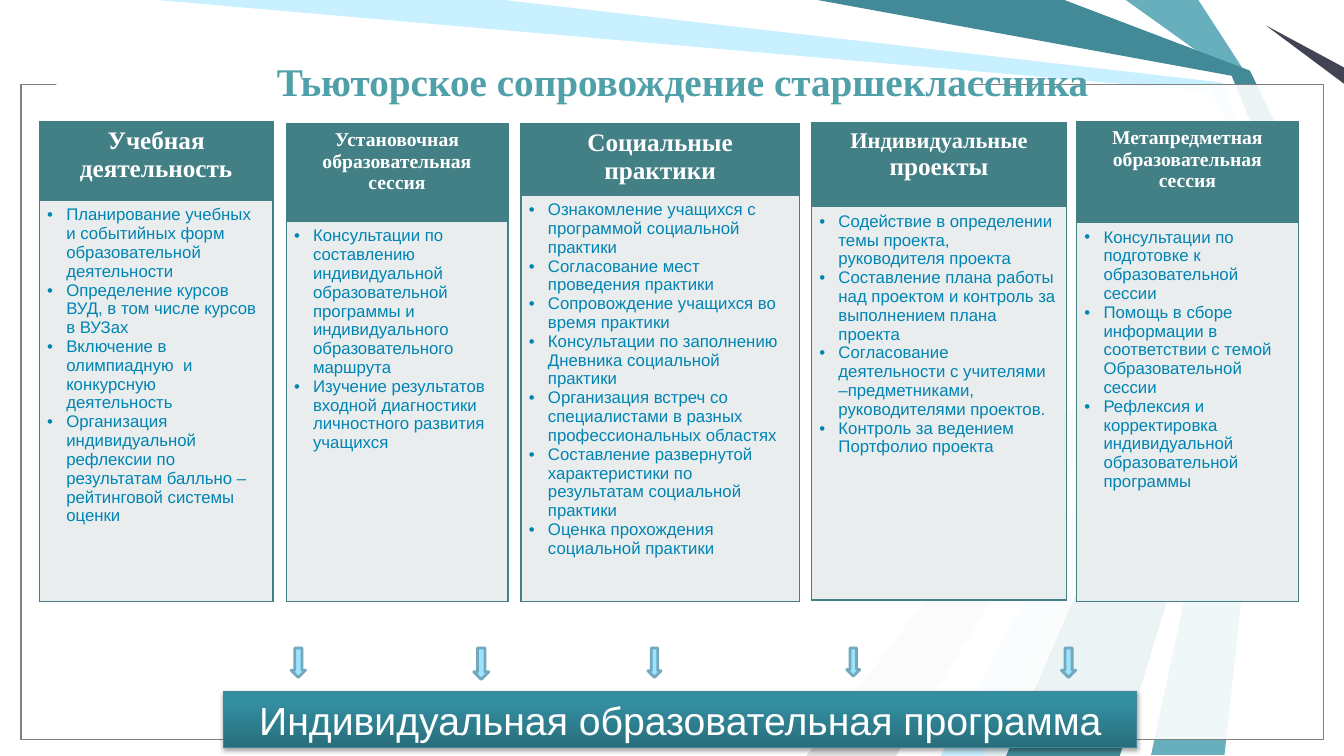
"""Build the slide on tutor support for senior pupils."""
from dataclasses import dataclass

import lxml.etree
import pptx
import pptx.dml.color
import pptx.enum.shapes
import pptx.enum.text
import pptx.oxml.ns
import pptx.util

Cm = pptx.util.Cm
Pt = pptx.util.Pt
qn = pptx.oxml.ns.qn
SHAPE = pptx.enum.shapes.MSO_SHAPE
CENTER = pptx.enum.text.PP_ALIGN.CENTER
SERIF, SANS = "Times New Roman", "Arial"
TEAL, PALE, BLUE, WHITE = "438086", "E9EDED", "0084B4", "FFFFFF"


@dataclass
class Ray:
    color: str
    points: list[tuple[float, float]]


@dataclass
class Span:
    text: str
    size: int


@dataclass
class Column:
    left: float
    top: float
    width: float
    head_height: float
    body_height: float
    heading: list[Span]
    tasks: list[str]


@dataclass
class Arrow:
    left: float
    width: float
    height: float


RAYS = [
    Ray("67AFBD", [(30.2, 0), (31.47, 1.96), (32.46, 4.24), (30.86, 19.02),
                   (29.01, 19.02), (32.18, 4.24), (31.04, 1.91), (28.37, 0)]),
    Ray("C9F0FF", [(3.96, 0), (12.98, 0), (30.94, 1.98), (31.9, 4.29),
                   (25.12, 19.05), (23.42, 19.05), (31.65, 4.39), (30.51, 2.31)]),
    Ray("E0E0E0", [(22.58, 19.05), (31.39, 4.6), (20.32, 19.05)]),
    Ray(WHITE, [(12.7, 0), (30.81, 2.08), (31.57, 4.11), (22.86, 19.05),
                (23.7, 19.05), (31.85, 4.01), (31.04, 1.91), (20.32, 0)]),
    Ray(WHITE, [(31.32, 0), (31.04, 0.43), (33.12, 3.05), (33.87, 3.18),
                (33.87, 2.54), (31.32, 0.43), (31.57, 0)]),
    Ray("424456", [(33.87, 2.11), (31.9, 0.64), (33.87, 1.7)]),
    Ray("428A98", [(20.6, 0), (26.82, 0), (31.5, 1.78), (32.72, 4.29),
                   (28.22, 19.05), (24.84, 19.05), (31.9, 4.01), (31.04, 1.91)]),
    Ray("E0EFF1", [(24.79, 19.05), (31.57, 4.65), (25.35, 19.05)]),
]

COLUMNS = [
    Column(0.99, 3.07, 5.89, 1.98, 10.11, [Span("Учебная деятельность", 18)], [
        "Планирование учебных и событийных форм образовательной деятельности",
        "Определение курсов ВУД, в том числе курсов в ВУЗах",
        "Включение в олимпиадную  и конкурсную деятельность",
        "Организация индивидуальной рефлексии по результатам балльно –рейтинговой системы оценки",
    ]),
    Column(7.21, 3.12, 5.59, 2.46, 9.58, [Span("Установочная образовательная сессия", 14)], [
        "Консультации по составлению индивидуальной образовательной программы "
        "и индивидуального образовательного маршрута",
        "Изучение результатов входной диагностики личностного развития учащихся",
    ]),
    Column(13.13, 3.12, 7.01, 1.8, 10.24, [Span("Социальные практики", 18)], [
        "Ознакомление учащихся с программой социальной практики",
        "Согласование мест проведения практики",
        "Сопровождение учащихся во время практики",
        "Консультации по заполнению Дневника социальной практики",
        "Организация встреч со специалистами в разных профессиональных областях",
        "Составление развернутой характеристики по результатам социальной практики",
        "Оценка прохождения социальной практики",
    ]),
    Column(20.45, 3.1, 6.43, 2.11, 9.91, [Span("Индивидуальные ", 16), Span("проекты", 18)], [
        "Содействие в определении темы проекта, руководителя проекта",
        "Составление плана работы над проектом и контроль за выполнением плана проекта",
        "Согласование деятельности с учителями –предметниками, руководителями проектов.",
        "Контроль за ведением Портфолио проекта",
    ]),
    Column(27.13, 3.07, 5.59, 2.54, 9.55, [Span("Метапредметная образовательная сессия", 14)], [
        "Консультации по подготовке к образовательной сессии",
        "Помощь в сборе информации в соответствии с темой Образовательной сессии",
        "Рефлексия и корректировка индивидуальной образовательной программы",
    ]),
]

ARROWS = [Arrow(7.34, 0.36, 0.74), Arrow(11.94, 0.38, 0.79), Arrow(16.33, 0.33, 0.74),
          Arrow(21.34, 0.33, 0.71), Arrow(26.75, 0.36, 0.74)]


def rgb(color: str) -> pptx.dml.color.RGBColor:
    return pptx.dml.color.RGBColor.from_string(color)


def add_node(parent, tag: str, **attributes: str):
    return lxml.etree.SubElement(parent, qn(tag), attributes)


def paint(shape, color: str, line: str = "", weight: float = 0.75) -> None:
    shape.shadow.inherit = False
    shape.fill.solid()
    shape.fill.fore_color.rgb = rgb(color)
    if line:
        shape.line.color.rgb = rgb(line)
        shape.line.width = Pt(weight)
    else:
        shape.line.fill.background()


def set_font(paragraph, name: str, size: int, color: str, bold: bool = False) -> None:
    font = paragraph.font
    font.name, font.size, font.bold = name, Pt(size), bold
    font.color.rgb = rgb(color)


def add_ray(page, ray: Ray) -> None:
    points = [(Cm(x), Cm(y)) for x, y in ray.points]
    builder = page.shapes.build_freeform(*points[0], scale=1.0)
    builder.add_line_segments(points[1:], close=True)
    paint(builder.convert_to_shape(), ray.color)


def add_box(page, kind, left: float, top: float, width: float, height: float):
    return page.shapes.add_shape(kind, Cm(left), Cm(top), Cm(width), Cm(height))


def add_frame(page) -> None:
    for line in (BLUE, "808080"):
        frame = add_box(page, SHAPE.RECTANGLE, 0.53, 2.13, 32.82, 16.51)
        paint(frame, WHITE, line)
        color = frame.fill._xPr.find(qn("a:solidFill")).find(qn("a:srgbClr"))
        add_node(color, "a:alpha", val="69000")
    paint(add_box(page, SHAPE.RECTANGLE, 1.42, 1.88, 23.14, 0.43), WHITE)


def style_cell(cell, color: str) -> None:
    cell.margin_left = cell.margin_right = Cm(0.2)
    cell.margin_top = cell.margin_bottom = Cm(0.13)
    for side in "LRTB":
        border = add_node(cell._tc.get_or_add_tcPr(), f"a:ln{side}", w=str(Pt(1)))
        add_node(add_node(border, "a:solidFill"), "a:srgbClr", val=TEAL)
    cell.fill.solid()
    cell.fill.fore_color.rgb = rgb(color)


def add_column(page, column: Column) -> None:
    heights = [column.head_height, column.body_height]
    table = page.shapes.add_table(2, 1, Cm(column.left), Cm(column.top),
                                  Cm(column.width), Cm(sum(heights))).table
    table.first_row = table.horz_banding = False
    for row, height in zip(table.rows, heights):
        row.height = Cm(height)
    head, body = table.cell(0, 0), table.cell(1, 0)
    style_cell(head, TEAL)
    style_cell(body, PALE)
    para = head.text_frame.paragraphs[0]
    para.alignment = CENTER
    set_font(para, SERIF, column.heading[0].size, WHITE, True)
    for span in column.heading:
        run = para.add_run()
        run.text = span.text
        if len(column.heading) > 1:
            run.font.size = Pt(span.size)
    body.text_frame.text = "\n".join(column.tasks)
    for para in body.text_frame.paragraphs:
        properties = para._p.get_or_add_pPr()
        properties.set("marL", str(Cm(0.48)))
        properties.set("indent", str(-Cm(0.48)))
        add_node(properties, "a:buFont", typeface=SANS)
        add_node(properties, "a:buChar", char="•")
        set_font(para, SANS, 12, BLUE)


def add_programme(page) -> None:
    band = add_box(page, SHAPE.RECTANGLE, 5.64, 17.42, 23.01, 1.42)
    paint(band, "338EA0", "3E8897")
    band.fill.gradient()
    band.fill.gradient_angle = 90
    for stop, position, color in zip(band.fill.gradient_stops, (0, 0.8), ("286D7B", "338EA0")):
        stop.position = position
        stop.color.rgb = rgb(color)
    effects = band._element.spPr.find(qn("a:effectLst"))
    shadow = add_node(effects, "a:outerShdw", blurRad=str(Pt(3.1)), dist=str(Pt(1.8)),
                      dir="5400000", rotWithShape="0")
    add_node(add_node(shadow, "a:srgbClr", val="000000"), "a:alpha", val="35000")
    band.text_frame.text = "Индивидуальная образовательная программа"
    band.text_frame.vertical_anchor = pptx.enum.text.MSO_ANCHOR.MIDDLE
    para = band.text_frame.paragraphs[0]
    para.alignment = CENTER
    set_font(para, SANS, 28, WHITE)


def add_title(page) -> None:
    box = page.shapes.add_textbox(Cm(6.73), Cm(1.32), Cm(22.2), Cm(1.45))
    box.text_frame.word_wrap = True
    box.text_frame.text = "Тьюторское сопровождение старшеклассника"
    set_font(box.text_frame.paragraphs[0], SERIF, 28, "4FA0A9", True)


def main() -> None:
    deck = pptx.Presentation()
    deck.slide_width, deck.slide_height = Cm(33.87), Cm(19.05)
    page = deck.slides.add_slide(deck.slide_layouts[6])
    for ray in RAYS:
        add_ray(page, ray)
    add_frame(page)
    for column in COLUMNS:
        add_column(page, column)
    add_programme(page)
    for arrow in ARROWS:
        shape = add_box(page, SHAPE.DOWN_ARROW, arrow.left, 16.33, arrow.width, arrow.height)
        paint(shape, "9BE3FF", "73A8BD", 2)
    add_title(page)
    deck.save("out.pptx")


if __name__ == "__main__":
    main()
